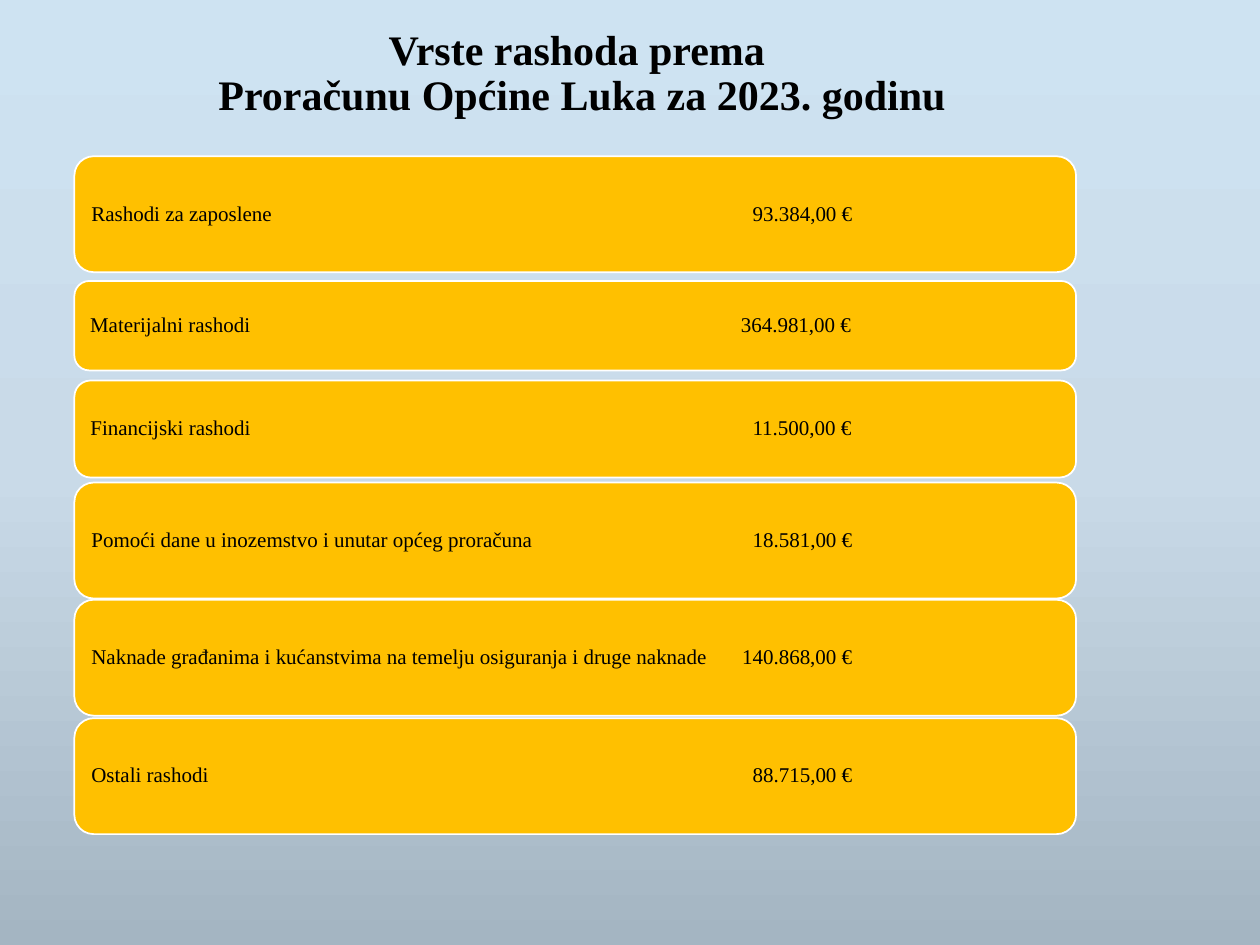
from copy import deepcopy
from dataclasses import dataclass

from lxml import etree
from pptx import Presentation
from pptx.dml.color import RGBColor
from pptx.enum.shapes import MSO_SHAPE
from pptx.enum.text import MSO_ANCHOR, MSO_AUTO_SIZE, PP_ALIGN
from pptx.oxml.ns import qn
from pptx.util import Inches, Pt

ROUNDED = MSO_SHAPE.ROUNDED_RECTANGLE
MIDDLE, BOTTOM = MSO_ANCHOR.MIDDLE, MSO_ANCHOR.BOTTOM
LEFT, CENTER = PP_ALIGN.LEFT, PP_ALIGN.CENTER
NO_AUTOFIT = MSO_AUTO_SIZE.NONE
TITLE_ONLY = 5


@dataclass(frozen=True)
class Theme:
    font: str = "Times New Roman"
    title_size: int = 24
    body_size: int = 12
    text: str = "000000"
    bar: str = "FFC000"
    outline: str = "FFFFFF"
    background: tuple = ((0, "CEE3F2"), (0.5, "C9DAE8"), (1, "A4B5C2"))


# label, amount, top, height
EXPENSES = (
    ("Rashodi za zaposlene", "93.384,00 €", 1.24, 0.92),
    ("Materijalni rashodi", "364.981,00 €", 2.23, 0.71),
    ("Financijski rashodi", "11.500,00 €", 3.02, 0.77),
    ("Pomoći dane u inozemstvo i unutar općeg proračuna", "18.581,00 €", 3.83, 0.92),
    ("Naknade građanima i kućanstvima na temelju osiguranja i druge naknade",
     "140.868,00 €", 4.76, 0.92),
    ("Ostali rashodi", "88.715,00 €", 5.7, 0.92),
)
BAR_LEFT, BAR_WIDTH = 0.59, 7.95
BAR_INSET = 0.09
AMOUNT_EDGE = 6.04


def write(para, text, *, font, size, color, bold=False, align=LEFT):
    """Fill a paragraph, turning each newline into a line break."""
    para.alignment = align
    para.line_spacing = 0.9
    for index, line in enumerate(text.split("\n")):
        if index:
            para.add_line_break()
        span = para.add_run()
        span.text = line
        span.font.name = font
        span.font.size = Pt(size)
        span.font.bold = bold
        span.font.color.rgb = RGBColor.from_string(color)


def add_right_tab(para, position):
    properties = para._p.get_or_add_pPr()
    tabs = etree.SubElement(properties, qn("a:tabLst"))
    etree.SubElement(tabs, qn("a:tab"), pos=str(Inches(position)), algn="r")


class SlideBuilder:
    def __init__(self, page, theme):
        self.page = page
        self.theme = theme

    def background(self):
        fill = self.page.background.fill
        fill.gradient()
        fill.gradient_angle = 270
        stop_list = self.page.element.find(".//" + qn("a:gsLst"))
        stop_list.append(deepcopy(stop_list[-1]))
        for stop, (position, color) in zip(fill.gradient_stops, self.theme.background):
            stop.position = position
            stop.color.rgb = RGBColor.from_string(color)

    def title(self, text, left, top, width, height):
        box = self.page.shapes.title
        box.left, box.top = Inches(left), Inches(top)
        box.width, box.height = Inches(width), Inches(height)
        frame = box.text_frame
        frame.auto_size = NO_AUTOFIT
        frame.vertical_anchor = BOTTOM
        write(frame.paragraphs[0], text, font=self.theme.font, bold=True,
              size=self.theme.title_size, color=self.theme.text, align=CENTER)

    def bar(self, label, amount, top, height):
        """Draw a rounded bar with its amount aligned on a right tab."""
        box = self.page.shapes.add_shape(
            ROUNDED, Inches(BAR_LEFT), Inches(top), Inches(BAR_WIDTH), Inches(height))
        box.shadow.inherit = False
        box.fill.solid()
        box.fill.fore_color.rgb = RGBColor.from_string(self.theme.bar)
        box.line.color.rgb = RGBColor.from_string(self.theme.outline)
        box.line.width = Pt(1)
        frame = box.text_frame
        frame.word_wrap = True
        frame.vertical_anchor = MIDDLE
        frame.margin_left = frame.margin_right = Inches(BAR_INSET)
        frame.margin_top = frame.margin_bottom = Inches(BAR_INSET)
        para = frame.paragraphs[0]
        write(para, f"{label}\t{amount}", font=self.theme.font,
              size=self.theme.body_size, color=self.theme.text)
        add_right_tab(para, AMOUNT_EDGE)


def main():
    deck = Presentation()
    deck.slide_width, deck.slide_height = Inches(10), Inches(7.5)
    page = deck.slides.add_slide(deck.slide_layouts[TITLE_ONLY])
    builder = SlideBuilder(page, Theme())
    builder.background()
    builder.title("Vrste rashoda prema \nProračunu Općine Luka za 2023. godinu",
                  0.8, 0.13, 7.64, 0.87)
    for expense in EXPENSES:
        builder.bar(*expense)
    deck.save("out.pptx")


if __name__ == "__main__":
    main()
